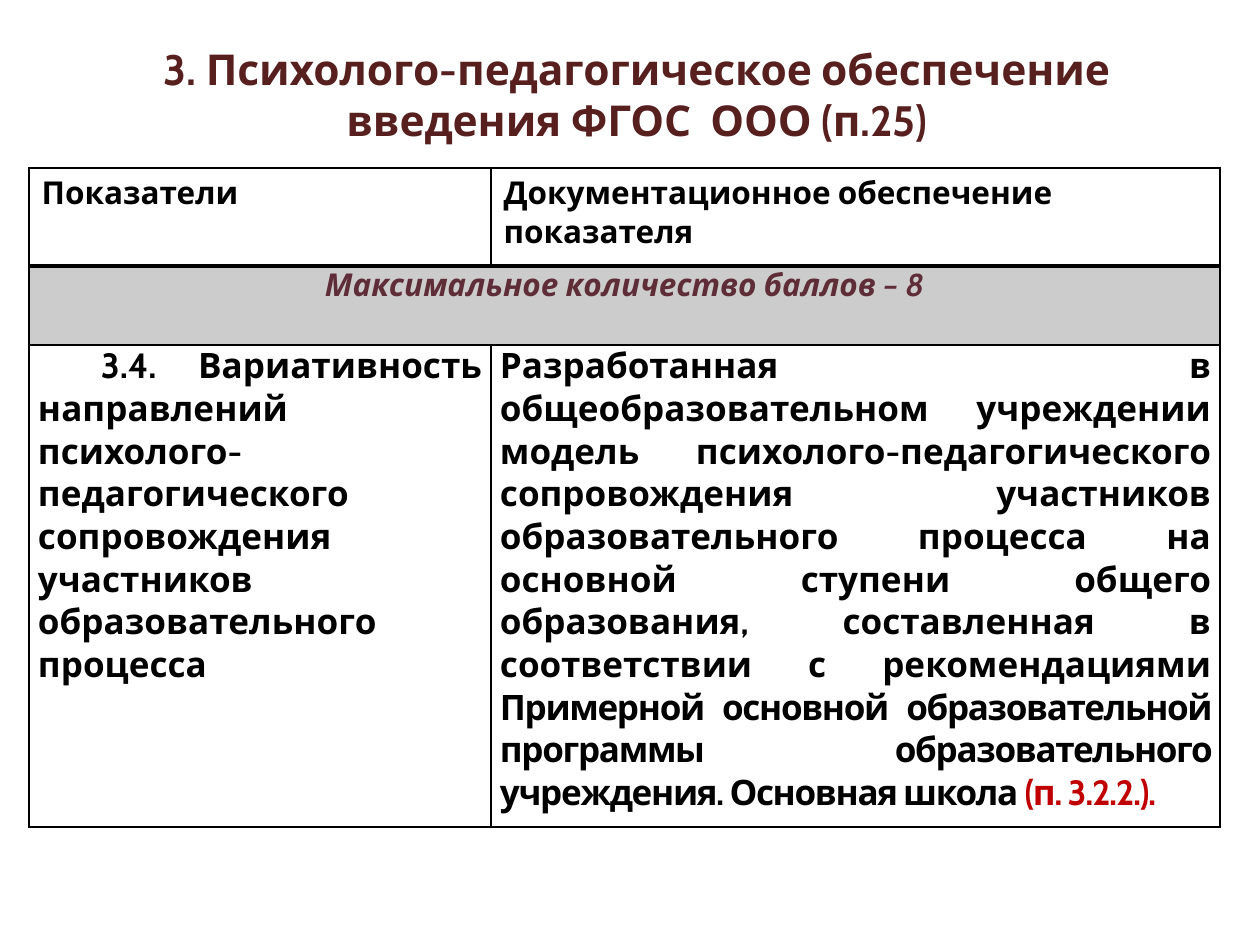
import pptx
import pptx.dml.color
import pptx.enum.text
import pptx.oxml
import pptx.oxml.ns
import pptx.util

PX = 914400 // 126
FONT = "Cabin"
COLORS = {"title": "57201F", "text": "000000", "score": "5E2D37",
          "reference": "C00000", "band": "CCCCCC", "paper": "FFFFFF"}
ALIGN = pptx.enum.text.PP_ALIGN


def px(length):
    return pptx.util.Emu(length * PX)


def style(font, size, color, italic=False):
    font.name = FONT
    font.size = pptx.util.Pt(size)
    font.bold = True
    font.italic = italic
    font.color.rgb = pptx.dml.color.RGBColor.from_string(COLORS[color])


prs = pptx.Presentation()
prs.slide_width = pptx.util.Inches(10)
prs.slide_height = pptx.util.Inches(7.5)
slide = prs.slides.add_slide(prs.slide_layouts[5])

title = slide.shapes.title
title.left, title.top, title.width, title.height = px(63), px(45), px(1148), px(98)
heading = title.text_frame
heading.text = "3. Психолого-педагогическое обеспечение введения ФГОС  ООО (п.25)"
heading.auto_size = pptx.enum.text.MSO_AUTO_SIZE.NONE
heading.vertical_anchor = pptx.enum.text.MSO_ANCHOR.MIDDLE
heading.paragraphs[0].alignment = ALIGN.CENTER
style(heading.paragraphs[0].font, 24.3, "title")

columns = [462, 729]
rows = [98, 79, 482]
table = slide.shapes.add_table(len(rows), len(columns), px(29), px(168),
                               px(sum(columns)), px(sum(rows))).table
table.first_row = False
table.horz_banding = False
for column, width in zip(table.columns, columns):
    column.width = px(width)
for row, height in zip(table.rows, rows):
    row.height = px(height)
table.cell(1, 0).merge(table.cell(1, 1))

contents = [
    (0, 0, ["Показатели"], 18, "text", ALIGN.LEFT),
    (0, 1, ["Документационное обеспечение показателя"], 18, "text", ALIGN.LEFT),
    (1, 0, ["Максимальное количество баллов – 8"], 18, "score", ALIGN.CENTER),
    (2, 0, ["3.4. Вариативность направлений психолого-педагогического "
            "сопровождения участников образовательного процесса"],
     20, "text", ALIGN.JUSTIFY),
    (2, 1, ["Разработанная в общеобразовательном учреждении модель "
            "психолого-педагогического сопровождения участников образовательного "
            "процесса на основной ступени общего образования, составленная в "
            "соответствии с рекомендациями ",
            "Примерной основной образовательной программы образовательного "
            "учреждения. Основная школа ",
            "(п. 3.2.2.)."], 20, "text", ALIGN.JUSTIFY),
]
for r, c, texts, size, color, alignment in contents:
    cell = table.cell(r, c)
    if r > 0:
        cell.margin_left = cell.margin_right = px(9)
        cell.margin_top = cell.margin_bottom = 0
    paragraph = cell.text_frame.paragraphs[0]
    paragraph.alignment = alignment
    style(paragraph.font, size, color, italic=color == "score")
    for text in texts:
        paragraph.add_run().text = text

indicator = table.cell(2, 0).text_frame.paragraphs[0]
indicator._p.get_or_add_pPr().set("indent", str(px(63)))
model, program, reference = table.cell(2, 1).text_frame.paragraphs[0].runs
for condensed in (program, reference):
    condensed._r.get_or_add_rPr().set("spc", "-80")
reference.font.color.rgb = pptx.dml.color.RGBColor.from_string(COLORS["reference"])

for r in range(len(rows)):
    for c in range(len(columns)):
        cell = table.cell(r, c)
        cell.fill.solid()
        cell.fill.fore_color.rgb = pptx.dml.color.RGBColor.from_string(
            COLORS["band" if r == 1 else "paper"])
        for position, side in enumerate(("L", "R", "T", "B")):
            heavy = (r, side) in ((0, "B"), (1, "T"))
            border = pptx.oxml.parse_xml(
                f'<a:ln{side} {pptx.oxml.ns.nsdecls("a")} w="{25400 if heavy else 12700}">'
                f'<a:solidFill><a:srgbClr val="{COLORS["text"]}"/></a:solidFill></a:ln{side}>')
            cell._tc.get_or_add_tcPr().insert(position, border)

prs.save("out.pptx")
